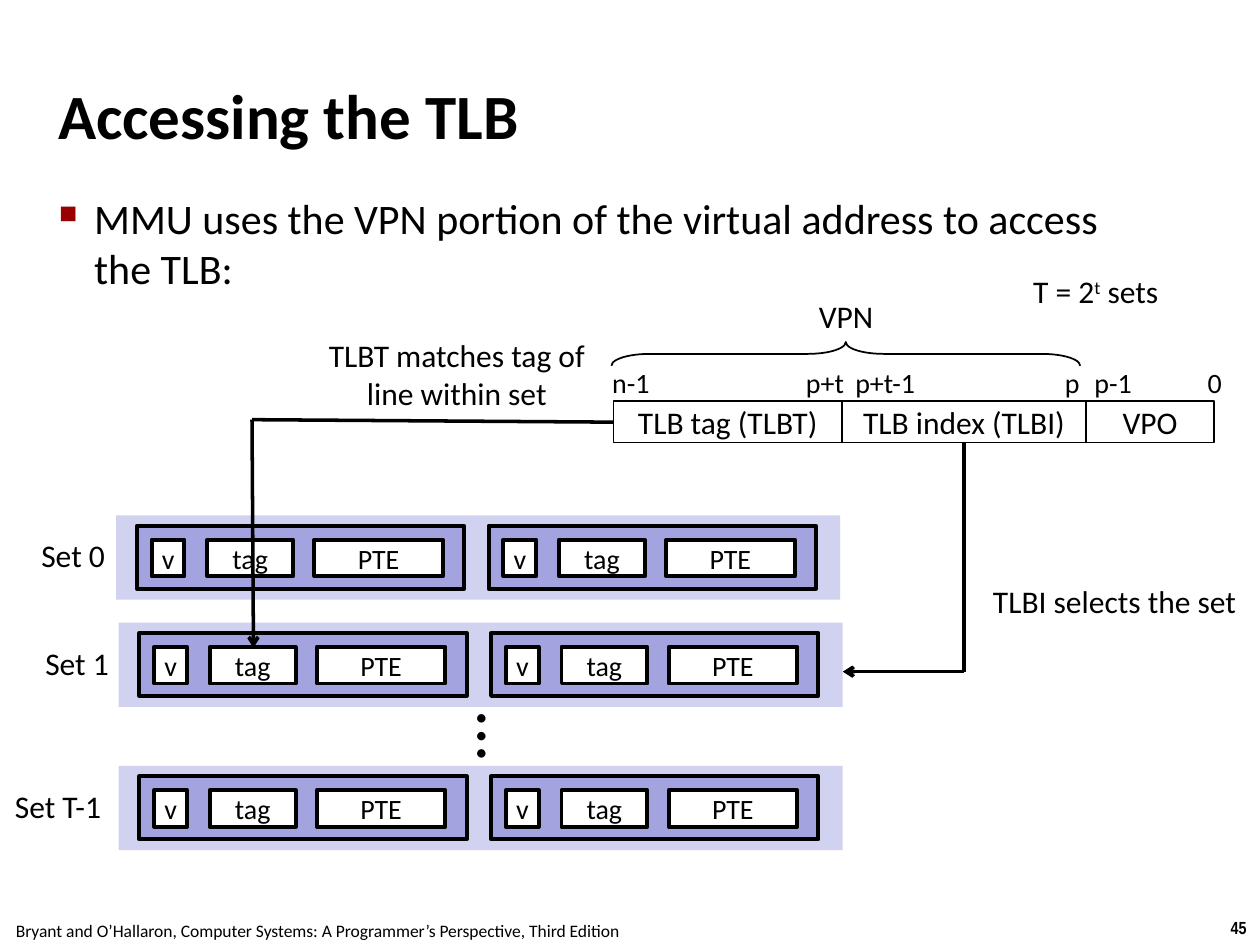
"""Build a slide on how the MMU looks up a set and tag in the TLB."""
import pptx
import pptx.dml.color
import pptx.enum.shapes
import pptx.enum.text
import pptx.oxml
import pptx.oxml.ns
import pptx.util
from pptx.util import Cm

SHAPE = pptx.enum.shapes.MSO_SHAPE
ALIGN = pptx.enum.text.PP_ALIGN
ANCHOR = pptx.enum.text.MSO_ANCHOR


def color(code):
    return pptx.dml.color.RGBColor.from_string(code)


def node(xml):
    return pptx.oxml.parse_xml(xml.replace(" ", f" {pptx.oxml.ns.nsdecls('a')} ", 1))


class Board:
    face = "Calibri"
    ink = "000000"
    paper = "FFFFFF"

    def __init__(self, slide):
        self.slide = slide

    def label(self, frame, words, size, align=ALIGN.CENTER, bold=False, face=None):
        para = frame.paragraphs[0]
        para.text = words
        para.alignment = align
        font = para.font
        font.name = face or self.face
        font.size = pptx.util.Pt(size)
        font.bold = bold
        font.color.rgb = color(self.ink)

    def inset(self, frame, gap):
        frame.margin_left = frame.margin_right = Cm(gap)
        frame.margin_top = frame.margin_bottom = Cm(gap)

    def title(self, words, left, top, width, height):
        head = self.slide.shapes.title
        head.left, head.top = Cm(left), Cm(top)
        head.width, head.height = Cm(width), Cm(height)
        frame = head.text_frame
        frame.vertical_anchor = ANCHOR.MIDDLE
        self.inset(frame, 0.1)
        self.label(frame, words, 36, ALIGN.LEFT, True)

    def text(self, words, left, top, width, height, size=18, wrap=False, **style):
        box = self.slide.shapes.add_textbox(Cm(left), Cm(top), Cm(width), Cm(height))
        box.text_frame.word_wrap = wrap
        self.label(box.text_frame, words, size, **style)
        return box

    def bullet(self, words, left, top, width, height):
        box = self.text(words, left, top, width, height, 24, True, align=ALIGN.LEFT)
        self.inset(box.text_frame, 0.1)
        para = box.text_frame.paragraphs[0]
        para.space_before = pptx.util.Pt(6)
        props = para._p.get_or_add_pPr()
        props.set("marL", str(Cm(0.71)))
        props.set("indent", str(-Cm(0.71)))
        last = props.find(pptx.oxml.ns.qn("a:defRPr"))
        for mark in (
            '<a:buClr ><a:srgbClr val="990000"/></a:buClr>',
            '<a:buSzPct val="60000"/>',
            '<a:buChar char="■"/>',
        ):
            last.addprevious(node(mark))

    def rect(self, left, top, width, height, fill, line=0, words="", size=16):
        box = self.slide.shapes.add_shape(
            SHAPE.RECTANGLE, Cm(left), Cm(top), Cm(width), Cm(height))
        box.shadow.inherit = False
        box.fill.solid()
        box.fill.fore_color.rgb = color(fill)
        if line:
            box.line.color.rgb = color(self.ink)
            box.line.width = pptx.util.Pt(line)
        else:
            box.line.fill.background()
        if words:
            box.text_frame.word_wrap = False
            box.text_frame.vertical_anchor = ANCHOR.MIDDLE
            self.label(box.text_frame, words, size)

    def brace(self, left, top, width, height):
        brace = self.slide.shapes.add_shape(
            SHAPE.LEFT_BRACE, Cm(left), Cm(top), Cm(width), Cm(height))
        brace.shadow.inherit = False
        brace.rotation = 90
        brace.adjustments[0] = 1.6
        brace.fill.background()
        brace.line.color.rgb = color(self.ink)
        brace.line.width = pptx.util.Pt(1)

    def line(self, start, end, arrow=False):
        line = self.slide.shapes.add_connector(
            pptx.enum.shapes.MSO_CONNECTOR.STRAIGHT, *map(Cm, start + end))
        line.line.color.rgb = color(self.ink)
        line.line.width = pptx.util.Pt(2)
        props = line._element.spPr
        if arrow:
            props.find(pptx.oxml.ns.qn("a:ln")).append(node('<a:tailEnd type="arrow"/>'))
        props.append(node("<a:effectLst />"))

    def route(self, start, turn, end):
        self.line(start, turn)
        self.line(turn, end, True)

    def entry(self, left, top):
        self.rect(left, top, 6.6, 1.27, "A3A3E0", 2.25)
        for words, shift, width in (("v", 0.3, 0.66), ("tag", 1.42, 1.73), ("PTE", 3.58, 2.59)):
            self.rect(left + shift, top + 0.28, width, 0.74, self.paper, 2.25, words)

    def group(self, name, left, top, start, width):
        self.rect(left, top, 14.6, 1.7, "D1D1F0")
        for i in range(2):
            self.entry(left + 0.42 + 7.09 * i, top + 0.21)
        self.text(name, start, top + 0.3, width, 1.02)


def main():
    deck = pptx.Presentation()
    deck.slide_width, deck.slide_height = Cm(25.4), Cm(19.05)
    board = Board(deck.slides.add_slide(deck.slide_layouts[5]))

    board.title("Accessing the TLB", 1.07, 0.71, 23.29, 3.18)
    board.bullet("MMU uses the VPN portion of the virtual address to access the TLB:",
                 1.09, 3.78, 21.95, 2.36)

    for words, left, width in (("TLB tag (TLBT)", 12.37, 4.6),
                               ("TLB index (TLBI)", 16.97, 4.93), ("VPO", 21.9, 2.57)):
        board.rect(left, 8.08, width, 0.84, board.paper, 1, words, 18)
    for words, left, width in (("n-1", 12.07, 1.3), ("p+t", 15.98, 1.3), ("p+t-1", 16.97, 1.75),
                               ("p", 21.21, 0.81), ("p-1", 21.79, 1.3), ("0", 24.08, 0.81)):
        board.text(words, left, 7.24, width, 0.94, 16)
    board.brace(16.81, 2.41, 0.48, 9.45)
    board.text("VPN", 16.23, 5.87, 1.65, 1.02)

    for name, left, top, start, width in (("Set 0", 2.34, 10.39, 0.56, 1.83),
                                          ("Set 1", 2.39, 12.55, 0.64, 1.83),
                                          ("Set T-1", 2.39, 15.44, 0, 2.34)):
        board.group(name, left, top, start, width)
    board.text("…", 8.48, 13.87, 1.52, 1.96, 40).rotation = 270

    count = board.text("T = 2", 20.5, 5.36, 3.18, 1.02, wrap=True).text_frame.paragraphs[0]
    power = count.add_run()
    power.text = "t"
    power.font._element.set("baseline", "30000")
    count.add_run().text = " sets"

    board.route((19.43, 8.92), (19.43, 13.54), (16.99, 13.54))
    board.text("TLBI selects the set", 19.69, 11.61, 5.56, 1.02)
    board.route((12.37, 8.51), (5.08, 8.46), (5.11, 13.06))
    board.text("TLBT matches tag of line within set", 6.35, 6.65, 5.72, 1.8, wrap=True)

    board.text("Bryant and O’Hallaron, Computer Systems: A Programmer’s Perspective, Third Edition",
               -0.05, 18.42, 12.9, 0.69, 10)
    board.text("45", 24.54, 18.36, 0.86, 0.69, 10, bold=True, face="Arial Narrow")
    deck.save("out.pptx")


if __name__ == "__main__":
    main()
